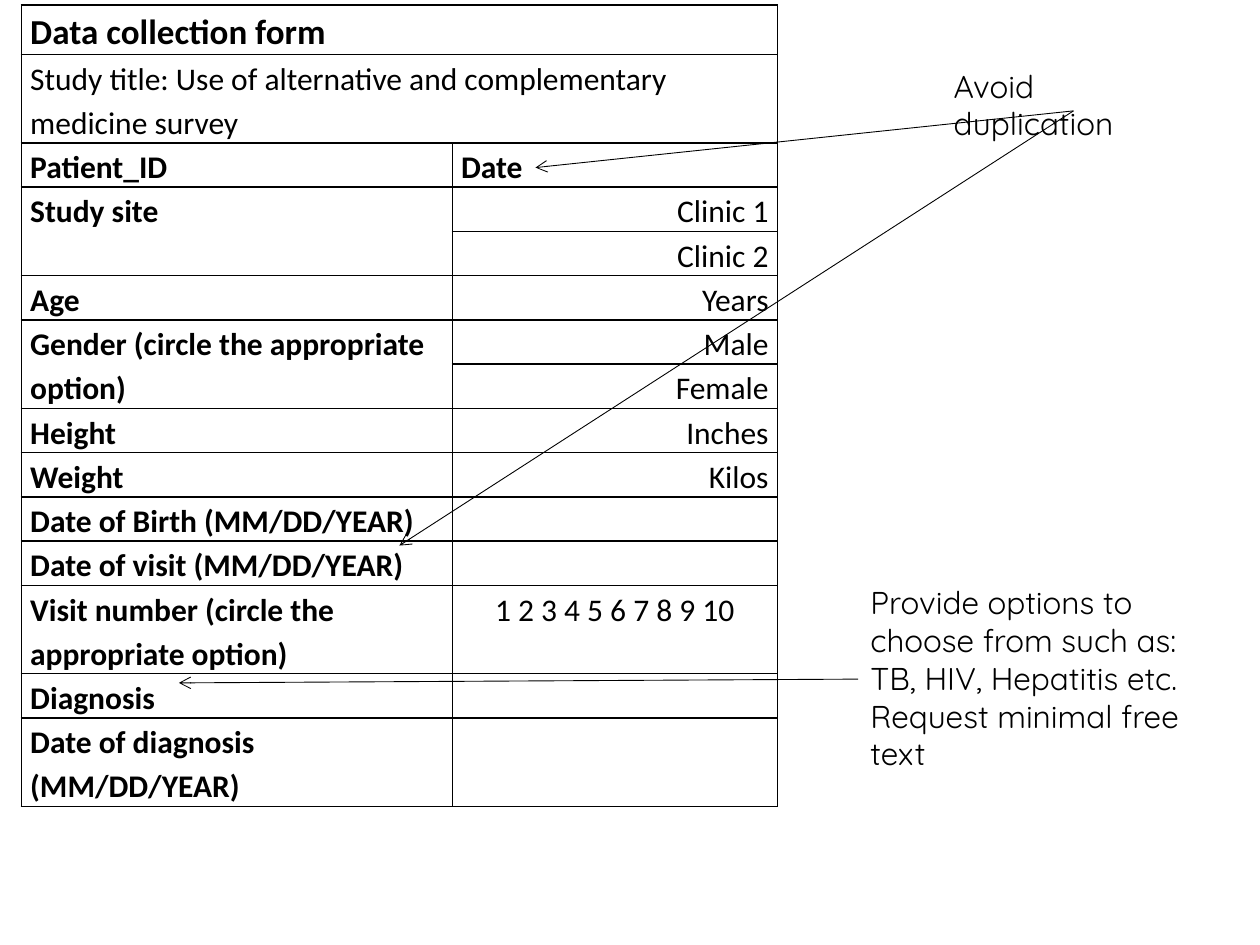
from typing import NamedTuple

from lxml import etree
from pptx import Presentation
from pptx.dml.color import RGBColor
from pptx.enum import shapes, text
from pptx.oxml import ns
from pptx.util import Inches, Pt

BLACK = "000000"
LEFT, CENTER, RIGHT = text.PP_ALIGN.LEFT, text.PP_ALIGN.CENTER, text.PP_ALIGN.RIGHT


class FormRow(NamedTuple):
    label: str
    entry: str = ""
    align: text.PP_ALIGN = RIGHT
    label_bold: bool = True
    entry_bold: bool = False
    size: int = 18
    full_width: bool = False
    joins_next: bool = False


class Arrow(NamedTuple):
    start: tuple[float, float]
    end: tuple[float, float]


class Note(NamedTuple):
    left: float
    top: float
    width: float
    height: float
    lines: list[str]


FORM = [
    FormRow("Data collection form", size=20, full_width=True),
    FormRow("Study title: Use of alternative and complementary medicine survey",
            label_bold=False, full_width=True),
    FormRow("Patient_ID", "Date", LEFT, entry_bold=True),
    FormRow("Study site", "Clinic 1", joins_next=True),
    FormRow("", "Clinic 2"),
    FormRow("Age", "Years"),
    FormRow("Gender (circle the appropriate option)", "Male", joins_next=True),
    FormRow("", "Female"),
    FormRow("Height", "Inches"),
    FormRow("Weight", "Kilos"),
    FormRow("Date of Birth (MM/DD/YEAR)"),
    FormRow("Date of visit (MM/DD/YEAR)"),
    FormRow("Visit number (circle the appropriate option)", "1 2 3 4 5 6 7 8 9 10", CENTER),
    FormRow("Diagnosis"),
    FormRow("Date of diagnosis (MM/DD/YEAR)"),
]
COLUMN_WIDTHS = (3.42, 2.58)
TITLE_HEIGHT, ROW_HEIGHT = 0.38, 0.35

ARROWS = [
    Arrow((8.52, 0.88), (4.25, 1.33)),
    Arrow((8.52, 0.88), (3.17, 4.33)),
    Arrow((6.81, 5.39), (1.42, 5.42)),
]
NOTES = [
    Note(7.47, 0.48, 2.1, 0.4, ["Avoid duplication"]),
    Note(6.81, 4.58, 2.84, 1.62, ["Provide options to choose from such as:",
                                  "TB, HIV, Hepatitis etc.",
                                  "Request minimal free text"]),
]


def rgb(value: str) -> RGBColor:
    return RGBColor.from_string(value)


def set_font(para, name: str, size: int, bold: bool = False) -> None:
    font = para.font
    font.name, font.size, font.bold = name, Pt(size), bold
    font.color.rgb = rgb(BLACK)


def add_borders(cell, width: int = 1) -> None:
    properties = cell._tc.get_or_add_tcPr()
    for position, side in enumerate(("lnL", "lnR", "lnT", "lnB")):
        line = etree.Element(ns.qn(f"a:{side}"), w=str(Pt(width)))
        fill = etree.SubElement(line, ns.qn("a:solidFill"))
        etree.SubElement(fill, ns.qn("a:srgbClr"), val=BLACK)
        properties.insert(position, line)


def fill_cell(cell, wording: str, align: text.PP_ALIGN, size: int, bold: bool) -> None:
    cell.margin_left = cell.margin_right = Inches(0.07)
    cell.margin_top = cell.margin_bottom = 0
    cell.fill.background()
    add_borders(cell)
    para = cell.text_frame.paragraphs[0]
    para.text = wording
    para.alignment, para.line_spacing = align, 1.15
    set_font(para, "Calibri", size, bold)


def add_form(page) -> None:
    height = TITLE_HEIGHT + ROW_HEIGHT * (len(FORM) - 1)
    frame = page.shapes.add_table(len(FORM), len(COLUMN_WIDTHS), Inches(0.17), Inches(0.04),
                                  Inches(sum(COLUMN_WIDTHS)), Inches(height))
    table = frame.table
    table.first_row = table.horz_banding = False
    for column, width in zip(table.columns, COLUMN_WIDTHS):
        column.width = Inches(width)
    for index, row in enumerate(FORM):
        table.rows[index].height = Inches(ROW_HEIGHT if index else TITLE_HEIGHT)
        label, entry = table.cell(index, 0), table.cell(index, 1)
        fill_cell(label, row.label, LEFT, row.size, row.label_bold)
        fill_cell(entry, row.entry, row.align, row.size, row.entry_bold)
        if row.full_width:
            label.merge(entry)
        if row.joins_next:
            label.merge(table.cell(index + 1, 0))


def add_arrow(page, arrow: Arrow) -> None:
    ends = [Inches(value) for value in arrow.start + arrow.end]
    connector = page.shapes.add_connector(shapes.MSO_CONNECTOR.STRAIGHT, *ends)
    connector.line.color.rgb = rgb(BLACK)
    connector.line.width = Pt(0.5)
    etree.SubElement(connector.line._get_or_add_ln(), ns.qn("a:tailEnd"), type="arrow")
    etree.SubElement(connector._element.spPr, ns.qn("a:effectLst"))


def add_note(page, note: Note) -> None:
    box = page.shapes.add_textbox(*(Inches(value) for value in note[:4]))
    frame = box.text_frame
    frame.word_wrap = True
    frame.text = "\n".join(note.lines)
    for para in frame.paragraphs:
        set_font(para, "Quicksand", 18)


def main() -> None:
    deck = Presentation()
    deck.slide_width, deck.slide_height = Inches(10), Inches(7.5)
    page = deck.slides.add_slide(deck.slide_layouts.get_by_name("Blank"))
    add_form(page)
    for arrow in ARROWS:
        add_arrow(page, arrow)
    for note in NOTES:
        add_note(page, note)
    deck.save("out.pptx")


if __name__ == "__main__":
    main()
